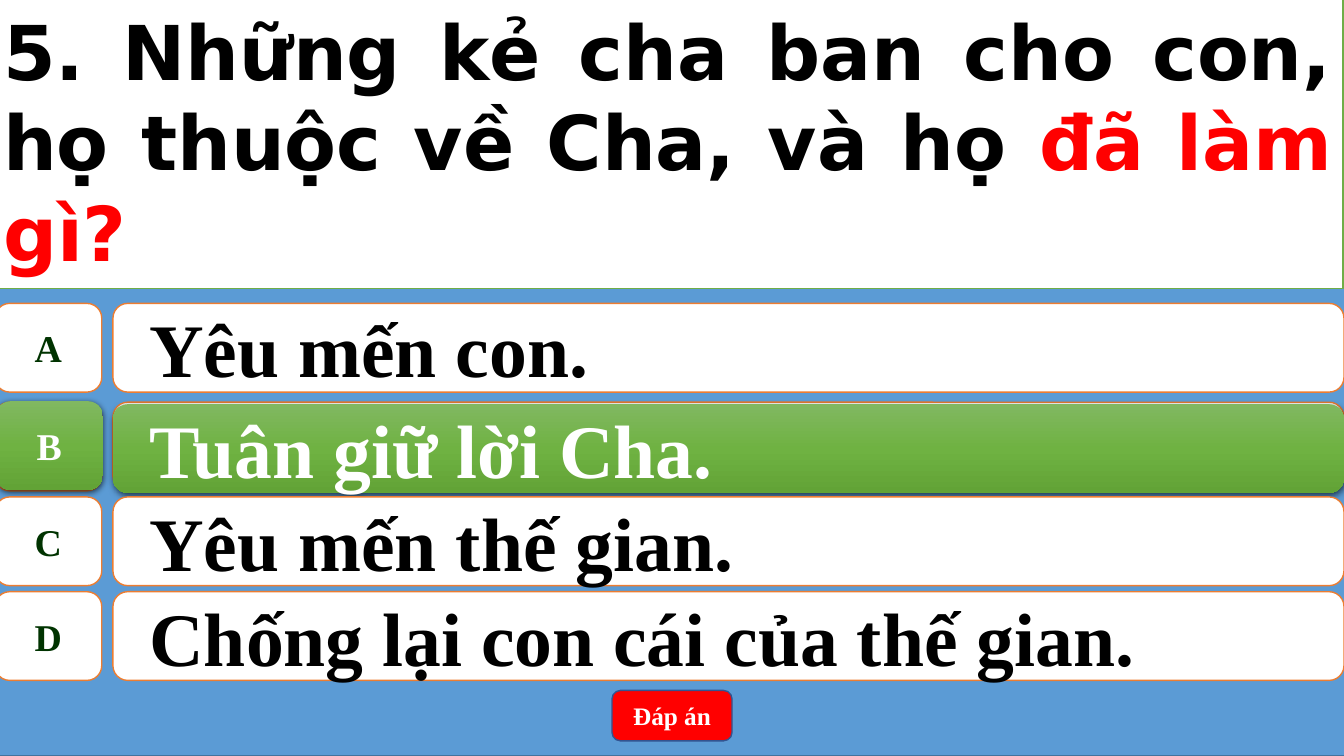
from copy import deepcopy

from lxml import etree
from pptx import Presentation
from pptx.dml.color import RGBColor
from pptx.enum import shapes, text
from pptx.oxml import ns
from pptx.util import Inches, Pt

WHITE = RGBColor(0xFF, 0xFF, 0xFF)
BLACK = RGBColor(0, 0, 0)
RED = RGBColor(0xFF, 0, 0)
BLUE = RGBColor(0x5B, 0x9B, 0xD5)
STEEL = RGBColor(0x43, 0x73, 0x9E)
NAVY = RGBColor(0x32, 0x54, 0x91)
ORANGE = RGBColor(0xED, 0x7D, 0x31)
GREEN = RGBColor(0x70, 0xAD, 0x47)
DARK = RGBColor(0, 0x33, 0)
FADE = (RGBColor(0x81, 0xB8, 0x61), RGBColor(0x6F, 0xB2, 0x42),
        RGBColor(0x62, 0xA3, 0x36))

RECT = shapes.MSO_SHAPE.RECTANGLE
ROUND = shapes.MSO_SHAPE.ROUNDED_RECTANGLE
TAB = shapes.MSO_SHAPE.FLOWCHART_ALTERNATE_PROCESS
CENTER = text.PP_ALIGN.CENTER


def write(shape, *runs, size=54, font="Times New Roman", align=None,
          indent=False, wrap=True):
    """Fill a shape with one bold paragraph of (words, colour) runs."""
    frame = shape.text_frame
    frame.word_wrap = wrap
    frame.auto_size = text.MSO_AUTO_SIZE.NONE
    frame.vertical_anchor = text.MSO_ANCHOR.MIDDLE
    para = frame.paragraphs[0]
    para.alignment = align or text.PP_ALIGN.LEFT
    para.line_spacing = 1.0
    para.space_before = Pt(0)
    if indent:
        props = para._p.get_or_add_pPr()
        props.set("marL", str(Inches(0.5)))
        props.set("indent", str(Inches(-0.28)))
    for words, color in runs:
        run = para.add_run()
        run.text = words
        run.font.size = Pt(size)
        run.font.name = font
        run.font.bold = True
        run.font.color.rgb = color


class Quiz:
    """Holds the style and the current slide."""

    def __init__(self, deck):
        """Add a title-only slide to the deck."""
        self.slide = deck.slides.add_slide(deck.slide_layouts[5])

    def paint(self, shape, fill, line):
        """Give a shape a plain fill and a thin line."""
        shape.fill.solid()
        shape.fill.fore_color.rgb = fill
        shape.line.color.rgb = line
        shape.line.width = Pt(1)

    def box(self, kind, at, fill=WHITE, line=ORANGE):
        """Add a flat preset shape."""
        shape = self.slide.shapes.add_shape(kind, *map(Inches, at))
        shape.shadow.inherit = False
        self.paint(shape, fill, line)
        return shape

    def title(self, at, *runs):
        """Place the question in the title, above the backdrop."""
        shape = self.slide.shapes.title
        shape.left, shape.top, shape.width, shape.height = map(Inches, at)
        self.paint(shape, WHITE, GREEN)
        write(shape, *runs, font="DejaVu Sans", align=text.PP_ALIGN.JUSTIFY)
        self.slide.shapes._spTree.append(shape._element)

    def glow(self, shape):
        """Mark a shape as right: green fade, no line, soft shadow."""
        shape.line.fill.background()
        shape.fill.gradient()
        shape.fill.gradient_angle = 270
        stops = shape._element.xpath(".//a:gsLst")[0]
        stops.insert(1, deepcopy(stops[0]))
        for i, (stop, color) in enumerate(zip(shape.fill.gradient_stops, FADE)):
            stop.position = i / 2
            stop.color.rgb = color
        effect = shape._element.xpath(".//a:effectLst")[0]
        shade = etree.SubElement(effect, ns.qn("a:outerShdw"), blurRad=str(Pt(4.5)),
                                 dist=str(Pt(1.5)), dir="5400000", rotWithShape="0")
        tint = etree.SubElement(shade, ns.qn("a:srgbClr"), val="000000")
        etree.SubElement(tint, ns.qn("a:alpha"), val="63000")

    def pair(self, top, drop=0, shift=0):
        """Add the letter tab and the answer bar of one row."""
        tab = self.box(TAB, (-0.05 + shift, top - shift, 1.06, 0.88))
        bar = self.box(ROUND, (1.12, top + drop, 12.21, 0.88))
        return tab, bar

    def row(self, top, letter, answer, right=False):
        """Add one answer; the right one has a green pair on top."""
        tab, bar = self.pair(top)
        if right:
            tab, bar = self.pair(top, drop=0.02, shift=0.01)
            self.glow(tab)
            self.glow(bar)
        write(tab, (letter, WHITE if right else DARK), size=27,
              align=CENTER, wrap=False)
        write(bar, (answer, WHITE if right else BLACK), indent=True)


deck = Presentation()
deck.slide_width, deck.slide_height = Inches(13.33), Inches(7.5)
quiz = Quiz(deck)
quiz.box(RECT, (-0.05, 0, 13.39, 7.5), BLUE, STEEL)

ROWS = [(3.01, "A", "Yêu mến con."),
        (3.99, "B", "Tuân giữ lời Cha."),
        (4.93, "C", "Yêu mến thế gian."),
        (5.87, "D", "Chống lại con cái của thế gian.")]
for top, letter, answer in ROWS:
    quiz.row(top, letter, answer, right=letter == "B")

button = quiz.box(ROUND, (6.07, 6.85, 1.19, 0.5), RED, NAVY)
write(button, ("Đáp án", WHITE), size=18, align=CENTER)
quiz.title((-0.07, -0.07, 13.39, 2.93),
           ("5. Những kẻ cha ban cho con, họ thuộc về Cha, và họ ", BLACK),
           ("đã làm gì?", RED))
deck.save("out.pptx")
